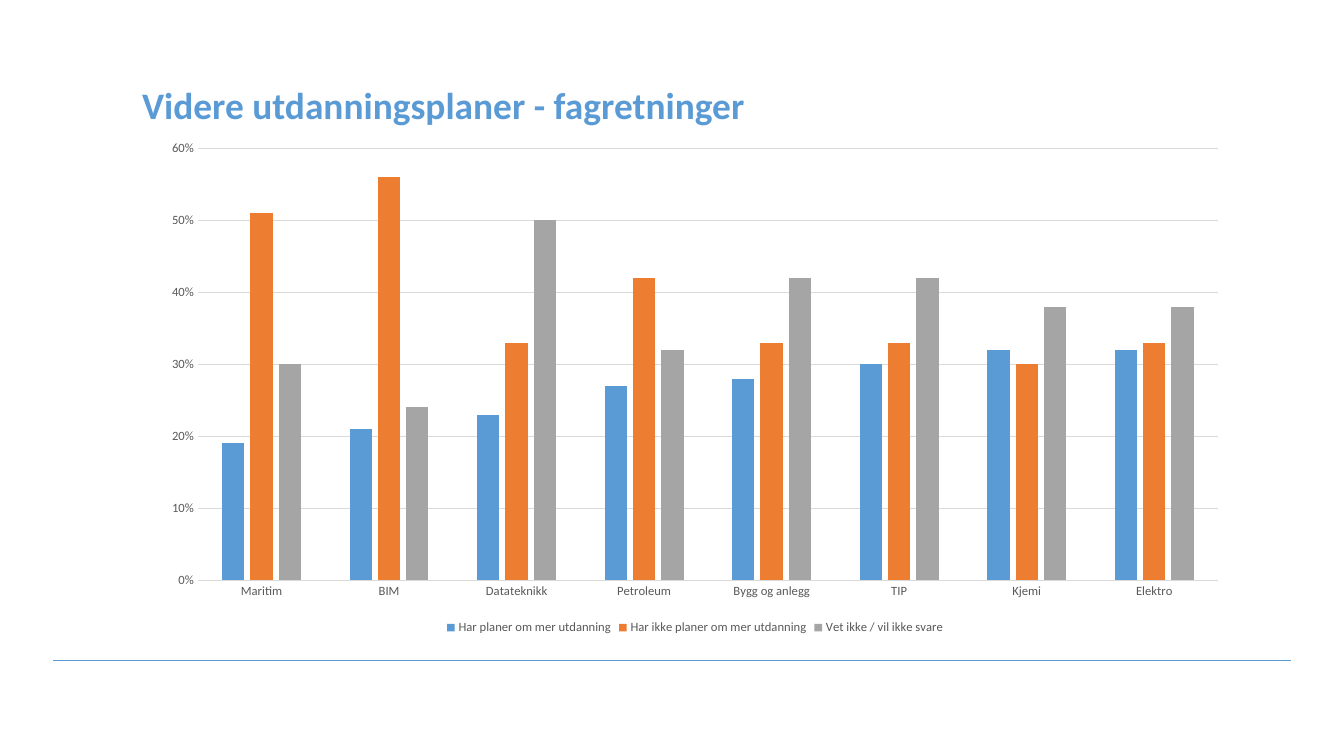
from pptx import Presentation
from pptx.chart.data import CategoryChartData
from pptx.dml.color import RGBColor
from pptx.enum.chart import XL_CHART_TYPE, XL_LEGEND_POSITION, XL_TICK_MARK
from pptx.enum.shapes import MSO_CONNECTOR
from pptx.oxml.ns import qn
from pptx.util import Pt
from lxml.etree import SubElement

# Content
TITLE = "Videre utdanningsplaner - fagretninger"
FIELDS = ["Maritim", "BIM", "Datateknikk", "Petroleum",
          "Bygg og anlegg", "TIP", "Kjemi", "Elektro"]
PLANS = [
    ("Har planer om mer utdanning", "blue",
     (0.19, 0.21, 0.23, 0.27, 0.28, 0.3, 0.32, 0.32)),
    ("Har ikke planer om mer utdanning", "orange",
     (0.51, 0.56, 0.33, 0.42, 0.33, 0.33, 0.3, 0.33)),
    ("Vet ikke / vil ikke svare", "gray",
     (0.3, 0.24, 0.5, 0.32, 0.42, 0.42, 0.38, 0.38)),
]

THEME = {
    "font": "Calibri",
    "blue": RGBColor.from_string("5B9BD5"),
    "orange": RGBColor.from_string("ED7D31"),
    "gray": RGBColor.from_string("A5A5A5"),
    "label": RGBColor.from_string("595959"),
    "grid": RGBColor.from_string("D9D9D9"),
    "black": RGBColor.from_string("000000"),
    "title": 26.7,
    "base": 10,
    "small": 9,
}


def style(font, size, color, bold=False):
    font.name = THEME["font"]
    font.size = Pt(THEME[size])
    font.color.rgb = THEME[color]
    font.bold = bold


def stroke(line, color, width):
    line.color.rgb = THEME[color]
    line.width = Pt(width)


def add_rule(slide):
    left, right, y = Pt(38.2), Pt(922.3), Pt(471.6)
    rule = slide.shapes.add_connector(MSO_CONNECTOR.STRAIGHT, left, y, right, y)
    stroke(rule.line, "blue", 0.5)
    SubElement(rule._element.spPr, qn("a:effectLst"))


def add_title(slide):
    box = slide.shapes.add_textbox(Pt(101.5), Pt(59), Pt(720), Pt(51.8))
    frame = box.text_frame
    frame.word_wrap = True
    frame.margin_left = frame.margin_right = 0
    frame.margin_top = frame.margin_bottom = 0
    para = frame.paragraphs[0]
    para.text = TITLE
    style(para.font, "title", "blue", True)


def add_plans(slide):
    data = CategoryChartData(number_format="0%")
    data.categories = FIELDS
    for name, _, vals in PLANS:
        data.add_series(name, vals)
    chart = slide.shapes.add_chart(
        XL_CHART_TYPE.COLUMN_CLUSTERED,
        Pt(107.3), Pt(93.6), Pt(778.3), Pt(362.9), data).chart
    style(chart.font, "base", "black")
    chart.has_title = False

    # Columns
    plot = chart.plots[0]
    plot.gap_width, plot.overlap = 219, -27
    plot.vary_by_categories = False
    for series, (_, color, _) in zip(plot.series, PLANS):
        series.format.fill.solid()
        series.format.fill.fore_color.rgb = THEME[color]
        series.invert_if_negative = False

    # Axes
    for axis in (chart.category_axis, chart.value_axis):
        axis.major_tick_mark = axis.minor_tick_mark = XL_TICK_MARK.NONE
        style(axis.tick_labels.font, "small", "label")
    stroke(chart.category_axis.format.line, "grid", 0.75)
    scale = chart.value_axis
    scale.minimum_scale, scale.maximum_scale, scale.major_unit = 0, 0.6, 0.1
    scale.tick_labels.number_format = "0%"
    scale.tick_labels.number_format_is_linked = False
    scale.format.line.fill.background()
    scale.has_major_gridlines = True
    stroke(scale.major_gridlines.format.line, "grid", 0.75)

    # Legend
    chart.has_legend = True
    chart.legend.position = XL_LEGEND_POSITION.BOTTOM
    chart.legend.include_in_layout = False
    style(chart.legend.font, "small", "label")


def main():
    deck = Presentation()
    deck.slide_width, deck.slide_height = Pt(960), Pt(540)
    slide = deck.slides.add_slide(deck.slide_layouts[6])
    add_rule(slide)
    add_title(slide)
    add_plans(slide)
    deck.save("out.pptx")


if __name__ == "__main__":
    main()
